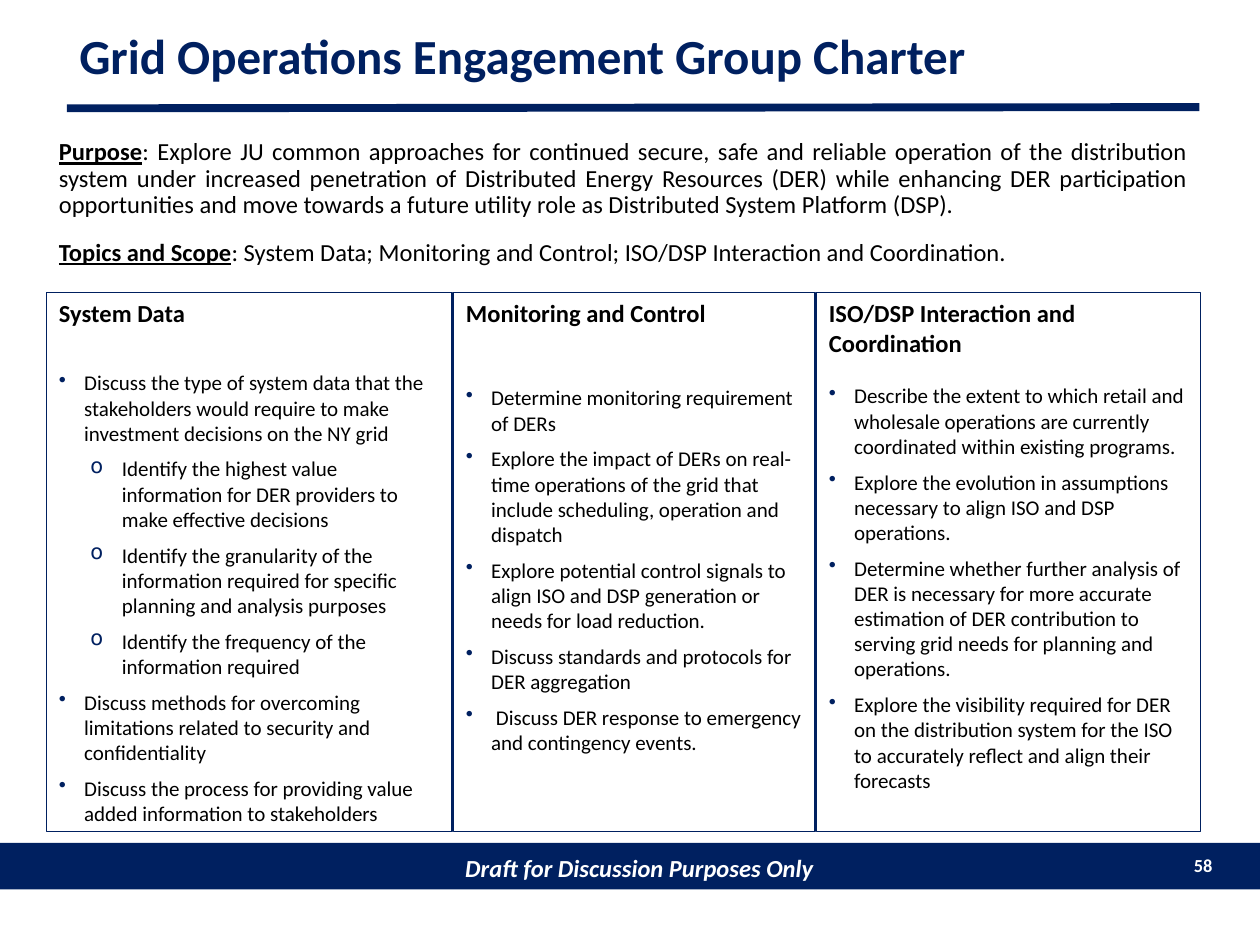
"""Build the Grid Operations Engagement Group Charter slide."""
import lxml.etree
import pptx
import pptx.dml.color
import pptx.enum.shapes
import pptx.enum.text
import pptx.oxml.ns
import pptx.util

Pt = pptx.util.Pt
ALIGN = pptx.enum.text.PP_ALIGN
ANCHOR = pptx.enum.text.MSO_ANCHOR
NAVY, WHITE, BLACK = "002060", "FFFFFF", "000000"
COLUMN_TOP, COLUMN_HEIGHT = 167, 308.2

SYSTEM_DATA = [
    (0, "Discuss the type of system data that the stakeholders would require "
        "to make investment decisions on the NY grid"),
    (1, "Identify the highest value information for DER providers to make effective decisions"),
    (1, "Identify the granularity of the information required for specific "
        "planning and analysis purposes"),
    (1, "Identify the frequency of the information required"),
    (0, "Discuss methods for overcoming limitations related to security and confidentiality"),
    (0, "Discuss the process for providing value added information to stakeholders"),
]
MONITORING = [
    (0, "Determine monitoring requirement of DERs"),
    (0, "Explore the impact of DERs on real-time operations of the grid that "
        "include scheduling, operation and dispatch"),
    (0, "Explore potential control signals to align ISO and DSP generation or "
        "needs for load reduction."),
    (0, "Discuss standards and protocols for DER aggregation"),
    (0, " Discuss DER response to emergency and contingency events."),
]
INTERACTION = [
    (0, "Describe the extent to which retail and wholesale operations are "
        "currently coordinated within existing programs."),
    (0, "Explore the evolution in assumptions necessary to align ISO and DSP operations."),
    (0, "Determine whether further analysis of DER is necessary for more accurate "
        "estimation of DER contribution to serving grid needs for planning and operations."),
    (0, "Explore the visibility required for DER on the distribution system for "
        "the ISO to accurately reflect and align their forecasts"),
]
COLUMNS = [
    (26.6, 231.8, "System Data", 24, SYSTEM_DATA),
    (259.2, 206.6, "Monitoring and Control", 32.65, MONITORING),
    (466.6, 219.6, "ISO/DSP Interaction and Coordination", 14.65, INTERACTION),
]
STATEMENTS = [
    ("Purpose", ": Explore JU common approaches for continued secure, safe and reliable "
                "operation of the distribution system under increased penetration of "
                "Distributed Energy Resources (DER) while enhancing DER participation "
                "opportunities and move towards a future utility role as Distributed "
                "System Platform (DSP)."),
    ("Topics and Scope", ": System Data; Monitoring and Control; ISO/DSP Interaction "
                         "and Coordination."),
]


def color(value):
    """Return the colour for a hex string."""
    return pptx.dml.color.RGBColor.from_string(value)


def add_text(paragraph, text, size=12, fill=BLACK, bold=False, italic=False, underline=False):
    """Add one formatted run to a paragraph."""
    run = paragraph.add_run()
    run.text = text
    font = run.font
    font.name, font.size = "Calibri", Pt(size)
    font.bold, font.italic, font.underline = bold, italic, underline
    font.color.rgb = color(fill)


def format_paragraph(paragraph, align=ALIGN.LEFT, before=0, after=0, spacing=1.0):
    """Set the alignment and spacing of a paragraph."""
    paragraph.alignment = align
    paragraph.space_before, paragraph.space_after = Pt(before), Pt(after)
    paragraph.line_spacing = spacing


def add_bullet(paragraph, level):
    """Give a paragraph the hanging navy bullet of its level."""
    left, hanging, character = [(14.4, 14.4, "•"), (36, 18, "o")][level]
    paragraph.level = level
    properties = paragraph._p.get_or_add_pPr()
    properties.set("marL", str(Pt(left)))
    properties.set("indent", str(-Pt(hanging)))
    qualified = pptx.oxml.ns.qn
    bullet_color = lxml.etree.SubElement(properties, qualified("a:buClr"))
    lxml.etree.SubElement(bullet_color, qualified("a:srgbClr"), val=NAVY)
    lxml.etree.SubElement(properties, qualified("a:buChar"), char=character)


def prepare_frame(shape, anchor=ANCHOR.TOP):
    """Wrap and anchor the text of a shape and return its frame."""
    frame = shape.text_frame
    frame.word_wrap = True
    frame.vertical_anchor = anchor
    return frame


def add_text_box(slide, left, top, width, height, anchor=ANCHOR.TOP):
    """Add a text box and return its frame."""
    box = slide.shapes.add_textbox(Pt(left), Pt(top), Pt(width), Pt(height))
    return prepare_frame(box, anchor)


def add_rectangle(slide, left, top, width, height, fill=None, line=None):
    """Add a rectangle and return its text frame."""
    shape = slide.shapes.add_shape(
        pptx.enum.shapes.MSO_SHAPE.RECTANGLE, Pt(left), Pt(top), Pt(width), Pt(height))
    shape.shadow.inherit = False
    if fill:
        shape.fill.solid()
        shape.fill.fore_color.rgb = color(fill)
    else:
        shape.fill.background()
    if line:
        shape.line.color.rgb = color(line)
        shape.line.width = Pt(0.75)
    else:
        shape.line.fill.background()
    return prepare_frame(shape)


def add_footer(slide):
    """Add the footer band and the page number."""
    frame = add_rectangle(slide, 0, 481.7, 720, 26.6, fill=NAVY)
    frame.margin_left, frame.margin_top = Pt(18), Pt(5.5)
    format_paragraph(frame.paragraphs[0], ALIGN.CENTER)
    add_text(frame.paragraphs[0], "Draft for Discussion Purposes Only",
             size=14, fill=WHITE, bold=True, italic=True)
    number = add_text_box(slide, 670.3, 484.6, 29.5, 20.9).paragraphs[0]
    format_paragraph(number, ALIGN.RIGHT)
    add_text(number, "58", size=10.5, fill=WHITE, bold=True)


def add_title(slide):
    """Add the title and the rule below it."""
    rule = slide.shapes.add_connector(
        pptx.enum.shapes.MSO_CONNECTOR.STRAIGHT, Pt(38.2), Pt(61.9), Pt(685.4), Pt(61.2))
    rule.line.color.rgb = color(NAVY)
    rule.line.width = Pt(4.5)
    lxml.etree.SubElement(rule._element.spPr, pptx.oxml.ns.qn("a:effectLst"))
    title = add_text_box(slide, 38.2, 9.4, 647.3, 48.2, ANCHOR.MIDDLE).paragraphs[0]
    format_paragraph(title, spacing=0.9)
    add_text(title, "Grid Operations Engagement Group Charter", size=28, fill=NAVY, bold=True)


def add_statements(slide):
    """Add the purpose and scope paragraphs."""
    frame = add_text_box(slide, 26.6, 76.3, 659.5, 86)
    for index, (label, text) in enumerate(STATEMENTS):
        paragraph = frame.add_paragraph() if index else frame.paragraphs[0]
        format_paragraph(paragraph, ALIGN.JUSTIFY, before=6 if index else 0, after=6, spacing=0.9)
        add_text(paragraph, label, size=14, bold=True, underline=True)
        add_text(paragraph, text, size=14)


def add_column(slide, left, width, heading, gap, items):
    """Add a framed column with a heading and bulleted items."""
    frame = add_rectangle(slide, left, COLUMN_TOP, width, COLUMN_HEIGHT, line=NAVY)
    format_paragraph(frame.paragraphs[0])
    add_text(frame.paragraphs[0], heading, size=14, bold=True)
    for index, (level, text) in enumerate(items):
        paragraph = frame.add_paragraph()
        add_bullet(paragraph, level)
        format_paragraph(paragraph, before=6 if index else gap)
        add_text(paragraph, text)


def main():
    """Build and save the slide."""
    presentation = pptx.Presentation()
    presentation.slide_width, presentation.slide_height = Pt(720), Pt(540)
    slide = presentation.slides.add_slide(presentation.slide_layouts[6])
    add_footer(slide)
    add_title(slide)
    add_statements(slide)
    for column in COLUMNS:
        add_column(slide, *column)
    presentation.save("out.pptx")


if __name__ == "__main__":
    main()
